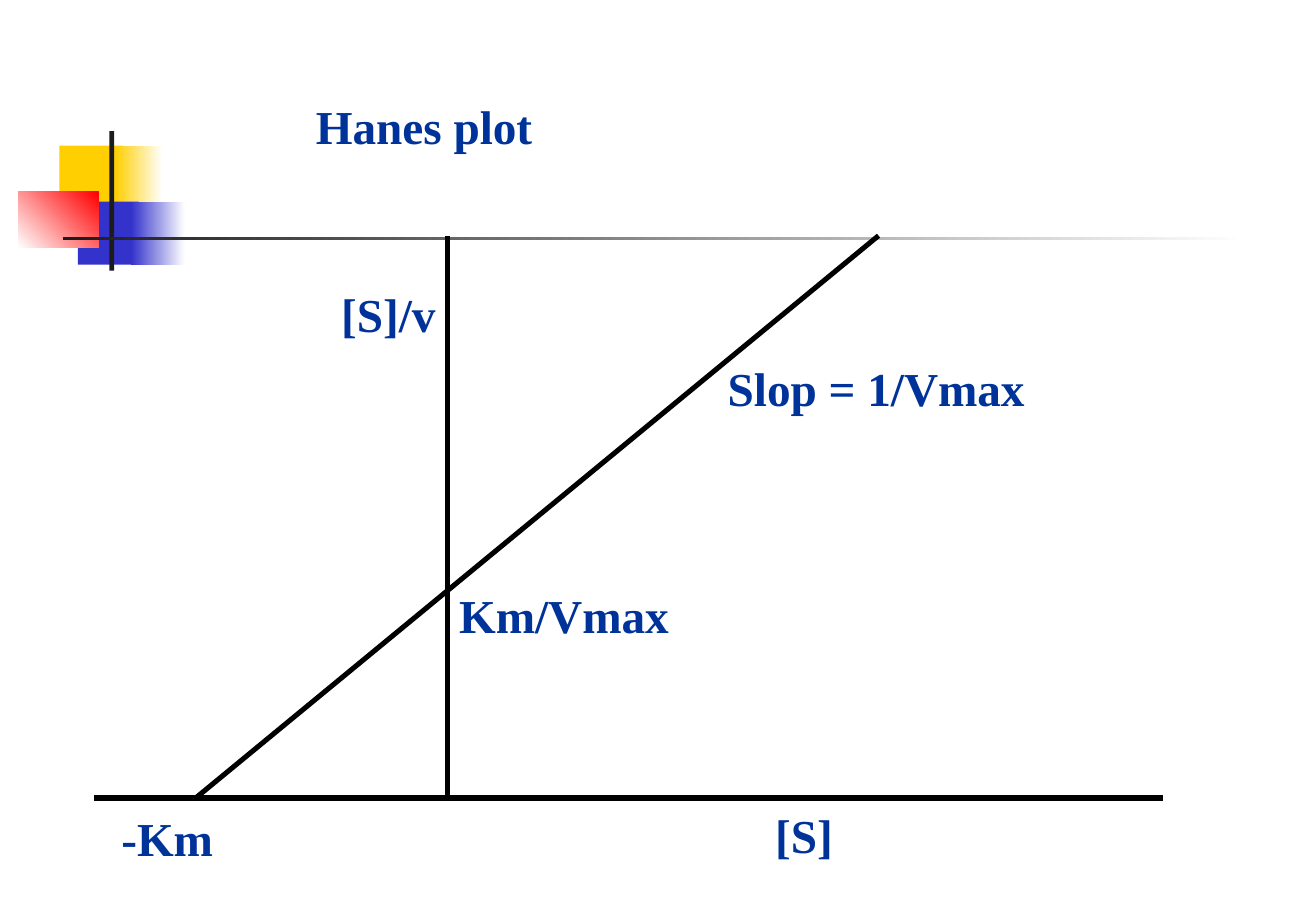
"""Build the Hanes plot slide: labelled axes, a sloping line and a corner ornament."""
from pptx import Presentation
from pptx.dml.color import RGBColor
from pptx.enum.shapes import MSO_CONNECTOR, MSO_SHAPE
from pptx.enum.text import MSO_ANCHOR, PP_ALIGN
from pptx.oxml.ns import qn
from pptx.util import Inches, Pt
from lxml import etree

RECT, STRAIGHT = MSO_SHAPE.RECTANGLE, MSO_CONNECTOR.STRAIGHT
LEFT, TOP = PP_ALIGN.LEFT, MSO_ANCHOR.TOP
NAVY = RGBColor(0x00, 0x33, 0x99)
BLACK = RGBColor(0x00, 0x00, 0x00)
WHITE = RGBColor(0xFF, 0xFF, 0xFF)
YELLOW = RGBColor(0xFF, 0xCF, 0x01)
BLUE = RGBColor(0x33, 0x33, 0xCC)
RED = RGBColor(0xFF, 0x00, 0x00)
DARK = RGBColor(0x1C, 0x1C, 0x1C)
FONT = "Times New Roman"

# Positions and sizes are percentages of the slide's width and height.
TITLE = ("Hanes plot", (23.08, 10, 60.76, 7.6))
ORNAMENT = [
    ((4.52, 16, 4.8, 6.93), (YELLOW,), 0),
    ((8.77, 16, 3.6, 6.93), (YELLOW, WHITE), 0),
    ((5.91, 22.13, 4.62, 6.93), (BLUE,), 0),
    ((9.97, 22.13, 4.06, 6.93), (BLUE, WHITE), 0),
    ((1.39, 21.07, 6.09, 6.13), (WHITE, RED), 45),
    ((8.31, 14.4, 0.37, 15.33), (DARK,), 0),
    ((4.8, 26, 90.03, 0.4), (DARK, WHITE), 0),
]
AXIS_X, PLOT_TOP, BASE_Y = 33.98, 25.87, 87.6
LINES = [
    (AXIS_X, PLOT_TOP, AXIS_X, BASE_Y),
    (88.37, BASE_Y, 7.11, BASE_Y),
    (66.76, PLOT_TOP, 14.87, BASE_Y),
]
LABEL_H = 7.6
LABELS = [
    ("Km/Vmax", AXIS_X, 63.73, 18.01),
    ("-Km", 8.31, 88.13, 8.96),
    ("Slop = 1/Vmax", 54.39, 38.8, 24.75),
    ("[S]", 57.99, 87.87, 6.28),
    ("[S]/v", 25.02, 30.67, 9.14),
]

prs = Presentation()
prs.slide_width, prs.slide_height = Inches(10.83), Inches(7.5)
s = prs.slides.add_slide(prs.slide_layouts[5])


def place(box):
    """Turn x, y pairs of percentages into slide lengths."""
    sides = (prs.slide_width, prs.slide_height) * 2
    return [round(side * share / 100) for side, share in zip(sides, box)]


def write(sp, text, size=28, color=NAVY, bold=True, wrap=False):
    """Set formatted text in a shape."""
    tf = sp.text_frame
    tf.word_wrap, tf.vertical_anchor = wrap, TOP
    p = tf.paragraphs[0]
    p.alignment = LEFT
    r = p.add_run()
    r.text = text
    r.font.name, r.font.size, r.font.bold = FONT, Pt(size), bold
    r.font.color.rgb = color


for box, colors, angle in ORNAMENT:
    sp = s.shapes.add_shape(RECT, *place(box))
    sp.shadow.inherit = False
    sp.line.fill.background()
    if len(colors) == 1:
        sp.fill.solid()
        sp.fill.fore_color.rgb = colors[0]
    else:
        sp.fill.gradient()
        sp.fill.gradient_angle = angle
        for stop, color, position in zip(sp.fill.gradient_stops, colors, (0, 1)):
            stop.color.rgb, stop.position = color, position

title_text, title_box = TITLE
title = s.shapes.title
title.left, title.top, title.width, title.height = place(title_box)
write(title, title_text, wrap=True)

for ends in LINES:
    line = s.shapes.add_connector(STRAIGHT, *place(ends))
    line.line.color.rgb, line.line.width = BLACK, Pt(3)
    etree.SubElement(line._element.spPr, qn("a:effectLst"))

for text, x, y, width in LABELS:
    write(s.shapes.add_textbox(*place((x, y, width, LABEL_H))), text)

prs.save("out.pptx")
